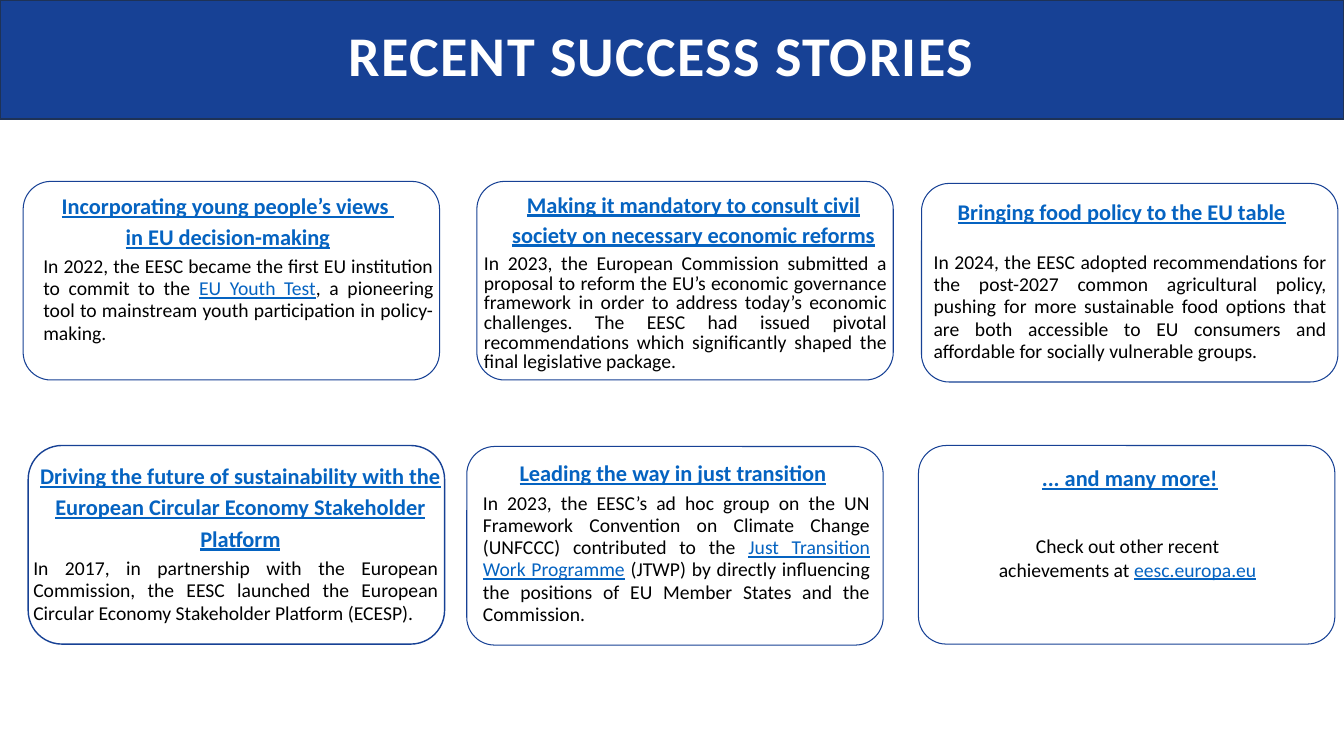
from dataclasses import dataclass

from pptx import Presentation
from pptx.dml.color import RGBColor
from pptx.enum.shapes import MSO_SHAPE
from pptx.enum.text import MSO_ANCHOR, MSO_AUTO_SIZE, PP_ALIGN
from pptx.shapes.autoshape import Shape
from pptx.slide import Slide
from pptx.text.text import TextFrame
from pptx.util import Inches, Pt

RECTANGLE = MSO_SHAPE.RECTANGLE
ROUNDED = MSO_SHAPE.ROUNDED_RECTANGLE
CENTER, JUSTIFY = PP_ALIGN.CENTER, PP_ALIGN.JUSTIFY
TOP, FIXED_SIZE = MSO_ANCHOR.TOP, MSO_AUTO_SIZE.NONE

FONT = "Calibri"
COLORS = {
    "blue": "174195",
    "banner_edge": "1E3256",
    "link": "0563C1",
    "text": "000000",
    "white": "FFFFFF",
}
CARD_WIDTH, CARD_HEIGHT = 4.13, 1.97
TITLE_ONLY_LAYOUT = 5


@dataclass(frozen=True)
class Span:
    text: str
    linked: bool = False


@dataclass(frozen=True)
class Block:
    left: float
    top: float
    width: float
    height: float
    spacing: float
    lines: tuple[tuple[Span, ...], ...]
    align: PP_ALIGN = JUSTIFY


@dataclass(frozen=True)
class Card:
    left: float
    top: float
    heading: Block
    body: Block
    corner: float = 0.14
    line_width: float = 0.75


def heading(left: float, top: float, width: float, height: float,
            *lines: str, spacing: float = 22.4) -> Block:
    spans = tuple((Span(line, linked=True),) for line in lines)
    return Block(left, top, width, height, spacing, spans, CENTER)


def body(left: float, top: float, width: float, height: float,
         *spans: Span, spacing: float = 15.9, align: PP_ALIGN = JUSTIFY) -> Block:
    return Block(left, top, width, height, spacing, (spans,), align)


CARDS = (
    Card(0.23, 1.8,
         heading(0.27, 1.86, 3.98, 0.6,
                 "Incorporating young people’s views ", "in EU decision-making"),
         body(0.43, 2.53, 3.87, 0.89,
              Span("In 2022, the EESC became the first EU institution to commit to the "),
              Span("EU Youth Test", linked=True),
              Span(", a pioneering tool to mainstream youth participation in "
                   "policy-making."))),
    Card(4.73, 1.8,
         heading(4.88, 1.86, 4, 0.87,
                 "Making it mandatory to consult civil society on necessary "
                 "economic reforms", spacing=21.5),
         body(4.8, 2.53, 4, 1.18,
              Span("In 2023, the European Commission submitted a proposal to reform "
                   "the EU’s economic governance framework in order to address "
                   "today’s economic challenges. The EESC had issued pivotal "
                   "recommendations which significantly shaped the final "
                   "legislative package."), spacing=14)),
    Card(9.14, 1.82,
         heading(9.15, 1.92, 3.95, 0.29, "Bringing food policy to the EU table"),
         body(9.26, 2.49, 3.9, 1.12,
              Span("In 2024, the EESC adopted recommendations for the post-2027 "
                   "common agricultural policy, pushing for more sustainable food "
                   "options that are both accessible to EU consumers and "
                   "affordable for socially vulnerable groups."))),
    Card(0.28, 4.42,
         heading(0.32, 4.54, 4.13, 0.91,
                 "Driving the future of sustainability with the European "
                 "Circular Economy Stakeholder Platform"),
         body(0.33, 5.53, 4.02, 0.67,
              Span("In 2017, in partnership with the European Commission, the EESC "
                   "launched the European Circular Economy Stakeholder Platform "
                   "(ECESP).")),
         corner=0.17, line_width=1),
    Card(4.63, 4.43,
         heading(4.77, 4.51, 3.81, 0.29, "Leading the way in just transition"),
         body(4.79, 4.88, 3.84, 1.36,
              Span("In 2023, the EESC’s ad hoc group on the UN Framework Convention "
                   "on Climate Change (UNFCCC) contributed to the "),
              Span("Just Transition Work Programme", linked=True),
              Span(" (JTWP) by directly influencing the positions of EU Member "
                   "States and the Commission."))),
    Card(9.11, 4.42,
         heading(10.06, 4.56, 2.29, 0.3, "... and many more!"),
         body(9.85, 5.3, 2.67, 0.47,
              Span("Check out other recent achievements at "),
              Span("eesc.europa.eu", linked=True), spacing=16.8, align=CENTER)),
)


def color(name: str) -> RGBColor:
    return RGBColor.from_string(COLORS[name])


def prepare_frame(frame: TextFrame) -> None:
    """Wrap the text from the top left corner, without margins."""
    frame.word_wrap = True
    frame.auto_size = FIXED_SIZE
    frame.vertical_anchor = TOP
    frame.margin_left = frame.margin_right = Inches(0)
    frame.margin_top = frame.margin_bottom = Inches(0)


def add_block(page: Slide, block: Block, size: float, bold: bool) -> None:
    box = page.shapes.add_textbox(Inches(block.left), Inches(block.top),
                                  Inches(block.width), Inches(block.height))
    frame = box.text_frame
    prepare_frame(frame)
    for index, spans in enumerate(block.lines):
        para = frame.add_paragraph() if index else frame.paragraphs[0]
        para.alignment = block.align
        para.line_spacing = Pt(block.spacing)
        for span in spans:
            run = para.add_run()
            run.text = span.text
            run.font.name, run.font.size, run.font.bold = FONT, Pt(size), bold
            run.font.underline = span.linked
            run.font.color.rgb = color("link" if span.linked else "text")


def add_card(page: Slide, card: Card) -> None:
    frame = page.shapes.add_shape(ROUNDED, Inches(card.left), Inches(card.top),
                                  Inches(CARD_WIDTH), Inches(CARD_HEIGHT))
    frame.shadow.inherit = False
    frame.adjustments[0] = card.corner
    frame.fill.background()
    frame.line.color.rgb = color("blue")
    frame.line.width = Pt(card.line_width)
    add_block(page, card.heading, size=16, bold=True)
    add_block(page, card.body, size=14, bold=False)


def add_banner(page: Slide, width: int) -> Shape:
    banner = page.shapes.add_shape(RECTANGLE, 0, 0, width, Inches(1.18))
    banner.shadow.inherit = False
    banner.fill.solid()
    banner.fill.fore_color.rgb = color("blue")
    banner.line.color.rgb = color("banner_edge")
    banner.line.width = Pt(1)
    return banner


def format_title(title: Shape) -> None:
    title.left, title.top = Inches(2.82), Inches(0.41)
    title.width, title.height = Inches(7.48), Inches(0.5)
    prepare_frame(title.text_frame)
    title.text_frame.text = "RECENT SUCCESS STORIES"
    para = title.text_frame.paragraphs[0]
    para.alignment, para.line_spacing = CENTER, Pt(33)
    font = para.runs[0].font
    font.name, font.size, font.bold = FONT, Pt(40), True
    font.color.rgb = color("white")
    para.runs[0]._r.get_or_add_rPr().set("spc", "100")


def main() -> None:
    deck = Presentation()
    deck.slide_width, deck.slide_height = Inches(13.33), Inches(7.5)
    page = deck.slides.add_slide(deck.slide_layouts[TITLE_ONLY_LAYOUT])
    title = page.shapes.title
    format_title(title)
    banner = add_banner(page, deck.slide_width)
    title.element.addprevious(banner.element)  # the banner lies behind the title
    for card in CARDS:
        add_card(page, card)
    deck.save("out.pptx")


if __name__ == "__main__":
    main()
